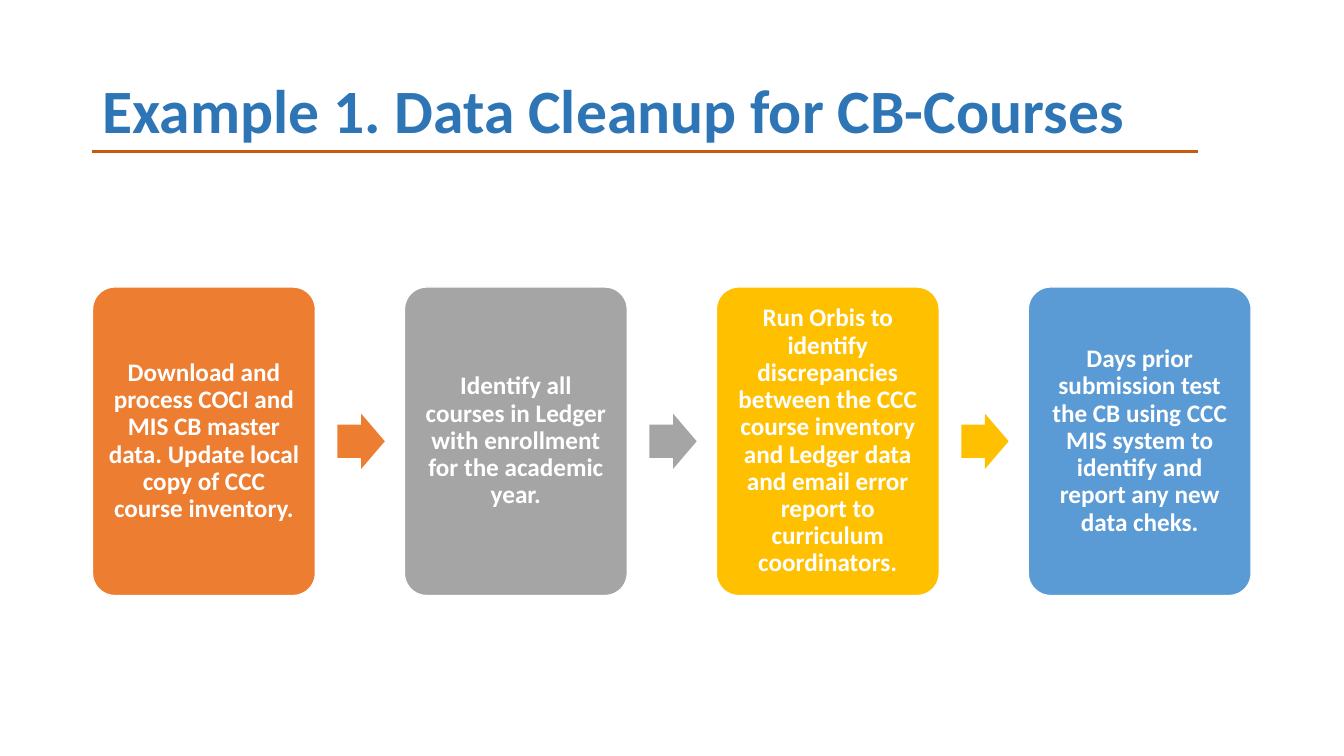
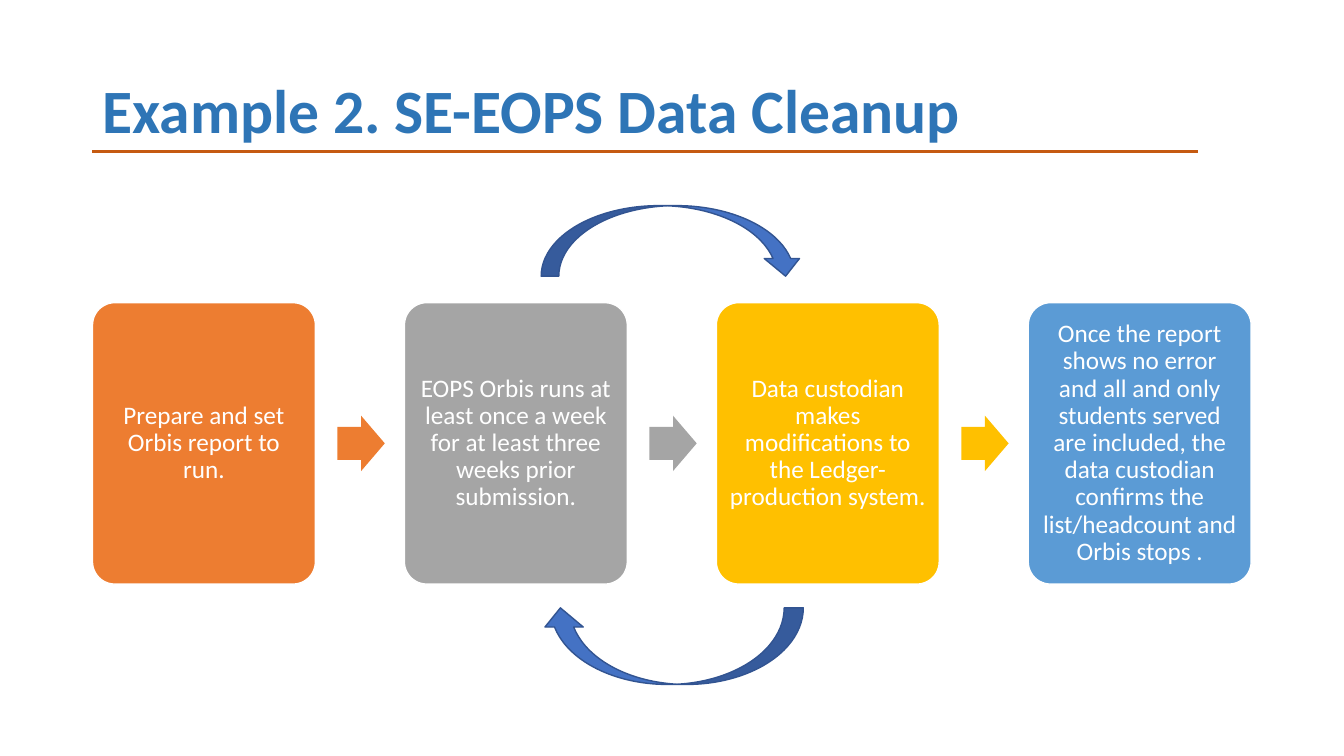
from pptx import Presentation
from pptx.dml.color import RGBColor
from pptx.enum import shapes, text
from pptx.oxml.ns import qn
from pptx.util import Pt
from lxml import etree

FONT = "Calibri"
COLOURS = {
    "title": "2E75B6", "rule": "C55A11", "white": "FFFFFF",
    "orange": "ED7D31", "grey": "A5A5A5", "gold": "FFC000", "sky": "5B9BD5",
    "loop": "4472C4", "loop_edge": "325491",
}
STEP_COLOURS = ["orange", "grey", "gold", "sky"]
LEFT, PITCH = 66.1, 222.8
STEP_WIDTH = 159.2
ARROW_OFFSET, ARROW_WIDTH, ARROW_HEIGHT = 175, 33.8, 39.5

SLIDES = [
    {
        "title": "Example 1. Data Cleanup for CB-Courses",
        "top": 205, "height": 220.4, "bold": True, "loops": [],
        "steps": [
            "Download and process COCI and MIS CB master data. Update local copy of CCC course inventory.",
            "Identify all courses in Ledger with enrollment for the academic year.",
            "Run Orbis to identify discrepancies between the CCC course inventory and Ledger data "
            "and email error report to curriculum coordinators.",
            "Days prior submission test the CB using CCC MIS system to identify and report any new data cheks.",
        ],
    },
    {
        "title": "Example 2. SE-EOPS Data Cleanup",
        "top": 216.2, "height": 201, "bold": False,
        "loops": [(146.9, 50.4, 0), (434.2, 54.7, 180)],
        "steps": [
            "Prepare and set Orbis report to run.",
            "EOPS Orbis runs at least once a week for at least three weeks prior submission.",
            "Data custodian makes modifications to the Ledger-production system.",
            "Once the report shows no error and all and only students served are included, "
            "the data custodian confirms the list/headcount and Orbis stops .",
        ],
    },
]


def add_filled(page, kind, left, top, width, height, fill, edge=None):
    shape = page.shapes.add_shape(kind, Pt(left), Pt(top), Pt(width), Pt(height))
    shape.shadow.inherit = False
    shape.fill.solid()
    shape.fill.fore_color.rgb = RGBColor.from_string(COLOURS[fill])
    if edge:
        shape.line.color.rgb = RGBColor.from_string(COLOURS[edge])
        shape.line.width = Pt(1)
    else:
        shape.line.fill.background()
    return shape


def write_text(box, words, size, colour, bold, align):
    frame = box.text_frame
    frame.word_wrap = True
    frame.vertical_anchor = text.MSO_ANCHOR.MIDDLE
    para = frame.paragraphs[0]
    para.alignment = align
    para.line_spacing = 0.9
    span = para.add_run()
    span.text = words
    span.font.name = FONT
    span.font.size = Pt(size)
    span.font.bold = bold
    span.font.color.rgb = RGBColor.from_string(COLOURS[colour])
    return frame


deck = Presentation()
deck.slide_width, deck.slide_height = Pt(960), Pt(540)

for content in SLIDES:
    page = deck.slides.add_slide(deck.slide_layouts[6])

    title = page.shapes.add_textbox(Pt(66), Pt(28.75), Pt(828), Pt(104.4))
    write_text(title, content["title"], 44, "title", True, text.PP_ALIGN.LEFT)

    rule = page.shapes.add_connector(shapes.MSO_CONNECTOR.STRAIGHT, Pt(66), Pt(108.3), Pt(856), Pt(108.3))
    rule.line.color.rgb = RGBColor.from_string(COLOURS["rule"])
    rule.line.width = Pt(2.25)
    etree.SubElement(rule._element.spPr, qn("a:effectLst"))

    top, height = content["top"], content["height"]
    for index, (words, colour) in enumerate(zip(content["steps"], STEP_COLOURS)):
        left = LEFT + index * PITCH
        step = add_filled(page, shapes.MSO_SHAPE.ROUNDED_RECTANGLE,
                          left, top, STEP_WIDTH, height, colour, "white")
        step.adjustments[0] = 0.1
        frame = write_text(step, words, 18, "white", content["bold"], text.PP_ALIGN.CENTER)
        frame.margin_left = frame.margin_right = frame.margin_top = frame.margin_bottom = Pt(5)
        if index < len(STEP_COLOURS) - 1:
            arrow = add_filled(page, shapes.MSO_SHAPE.RIGHT_ARROW, left + ARROW_OFFSET,
                               top + (height - ARROW_HEIGHT) / 2, ARROW_WIDTH, ARROW_HEIGHT, colour)
            arrow.adjustments[0] = 0.6
            arrow.adjustments[1] = 0.5

    for loop_top, loop_height, turn in content["loops"]:
        loop = add_filled(page, shapes.MSO_SHAPE.CURVED_DOWN_ARROW,
                          386.6, loop_top, 187.2, loop_height, "loop", "loop_edge")
        loop.rotation = turn

deck.save("out.pptx")
